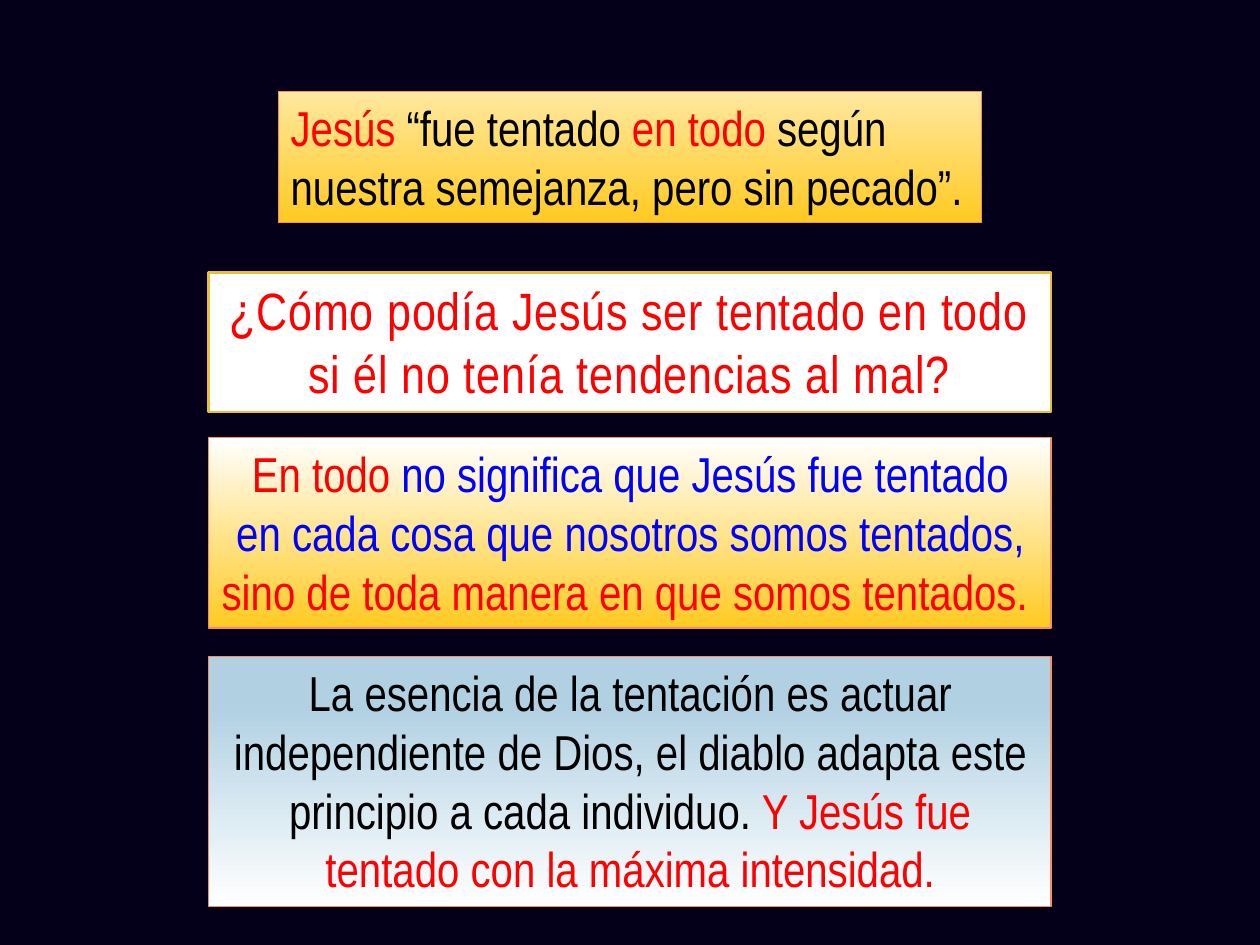
from dataclasses import dataclass

import pptx
import pptx.dml.color
import pptx.enum.text
import pptx.oxml
import pptx.oxml.ns
import pptx.util
from pptx.util import Cm

ALIGN = pptx.enum.text.PP_ALIGN


@dataclass(frozen=True)
class Theme:
    night: str = "04001A"
    red: str = "FF0000"
    blue: str = "0000FF"
    black: str = "000000"
    white: str = "FFFFFF"
    cream: str = "FFE89F"
    gold: str = "FFCA21"
    sky: str = "B1D1E3"
    coral: str = "F98C61"
    mustard: str = "E6C133"
    font: str = "Arial Narrow"
    body: float = 28
    question: float = 30
    outline: float = 1.5


@dataclass(frozen=True)
class Span:
    text: str
    color: str


@dataclass(frozen=True)
class Panel:
    top: float
    width: float
    height: float
    paras: list[list[Span]]
    fill: tuple[str, ...]
    fill_start: float = 0
    border: str = Theme.coral
    border_width: float = 0.75
    size: float = Theme.body
    spacing: float = 0
    align: ALIGN = ALIGN.CENTER


THEME = Theme()
PAGE_WIDTH, PAGE_HEIGHT = 25.4, 19.05

PANELS = [
    Panel(1.85, 14.18, 2.64, [[
        Span("Jesús ", THEME.red),
        Span("“fue tentado ", THEME.black),
        Span("en todo ", THEME.red),
        Span("según nuestra semejanza, pero sin pecado”.", THEME.black),
    ]], (THEME.cream, THEME.gold), align=ALIGN.LEFT),
    Panel(5.49, 16.98, 2.82, [[
        Span("¿Cómo podía Jesús ser tentado en todo si él no tenía "
             "tendencias al mal?", THEME.red),
    ]], (THEME.white,), border=THEME.mustard, border_width=1.5,
        size=THEME.question, spacing=0.5),
    Panel(8.82, 16.98, 3.84, [
        [Span("En todo ", THEME.red),
         Span("no significa que Jesús fue tentado", THEME.blue)],
        [Span(" en cada cosa que nosotros somos tentados, ", THEME.blue)],
        [Span("sino de toda manera en que somos tentados. ", THEME.red)],
    ], (THEME.white, THEME.gold)),
    Panel(13.23, 16.98, 5.05, [[
        Span("La esencia de la tentación es actuar independiente de Dios, "
             "el diablo adapta este principio a cada individuo. ", THEME.black),
        Span("Y Jesús fue tentado con la máxima intensidad.", THEME.red),
    ]], (THEME.sky, THEME.white), fill_start=0.2),
]


def rgb(color: str) -> pptx.dml.color.RGBColor:
    return pptx.dml.color.RGBColor.from_string(color)


def apply_format(target, values: dict) -> None:
    for name, value in values.items():
        setattr(target, name, value)


def paint(fill, colors: tuple[str, ...], start: float = 0) -> None:
    """Fill with one colour, or with a gradient running from top to bottom."""
    if len(colors) == 1:
        fill.solid()
        fill.fore_color.rgb = rgb(colors[0])
        return
    fill.gradient()
    fill.gradient_angle = 270
    for stop, color, position in zip(fill.gradient_stops, colors, (start, 1)):
        stop.color.rgb = rgb(color)
        stop.position = position


def outline_letters(properties, color: str) -> None:
    width = pptx.util.Pt(THEME.outline)
    properties.insert(0, pptx.oxml.parse_xml(
        f'<a:ln {pptx.oxml.ns.nsdecls("a")} w="{width}"><a:solidFill>'
        f'<a:srgbClr val="{color}"/></a:solidFill></a:ln>'))


def add_span(para, span: Span, panel: Panel) -> None:
    run = para.add_run()
    run.text = span.text
    apply_format(run.font, {"name": THEME.font, "size": pptx.util.Pt(panel.size)})
    run.font.color.rgb = rgb(span.color)
    properties = run._r.get_or_add_rPr()
    if panel.spacing:
        properties.set("spc", str(round(panel.spacing * 100)))
    outline_letters(properties, span.color)


def add_panel(page, panel: Panel) -> None:
    left = (PAGE_WIDTH - panel.width) / 2
    box = page.shapes.add_textbox(
        Cm(left), Cm(panel.top), Cm(panel.width), Cm(panel.height))
    paint(box.fill, panel.fill, panel.fill_start)
    paint(box.line.fill, (panel.border,))
    box.line.width = pptx.util.Pt(panel.border_width)
    frame = box.text_frame
    apply_format(frame, {
        "word_wrap": True,
        "auto_size": pptx.enum.text.MSO_AUTO_SIZE.SHAPE_TO_FIT_TEXT,
    })
    for index, spans in enumerate(panel.paras):
        para = frame.add_paragraph() if index else frame.paragraphs[0]
        para.alignment = panel.align
        for span in spans:
            add_span(para, span, panel)


def main() -> None:
    deck = pptx.Presentation()
    apply_format(deck, {"slide_width": Cm(PAGE_WIDTH),
                        "slide_height": Cm(PAGE_HEIGHT)})
    page = deck.slides.add_slide(deck.slide_layouts[6])
    paint(page.background.fill, (THEME.night,))
    for panel in PANELS:
        add_panel(page, panel)
    deck.save("out.pptx")


if __name__ == "__main__":
    main()
